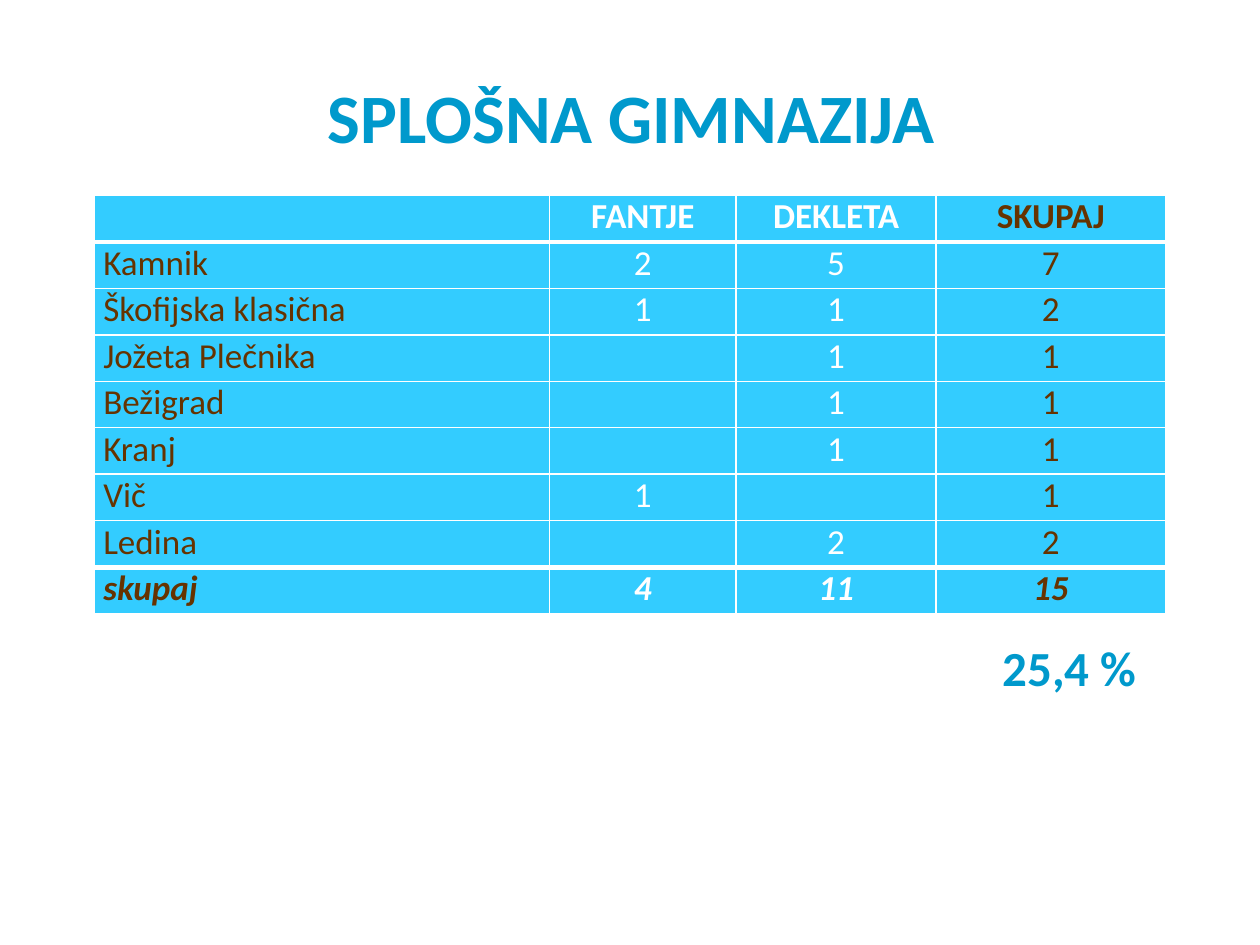
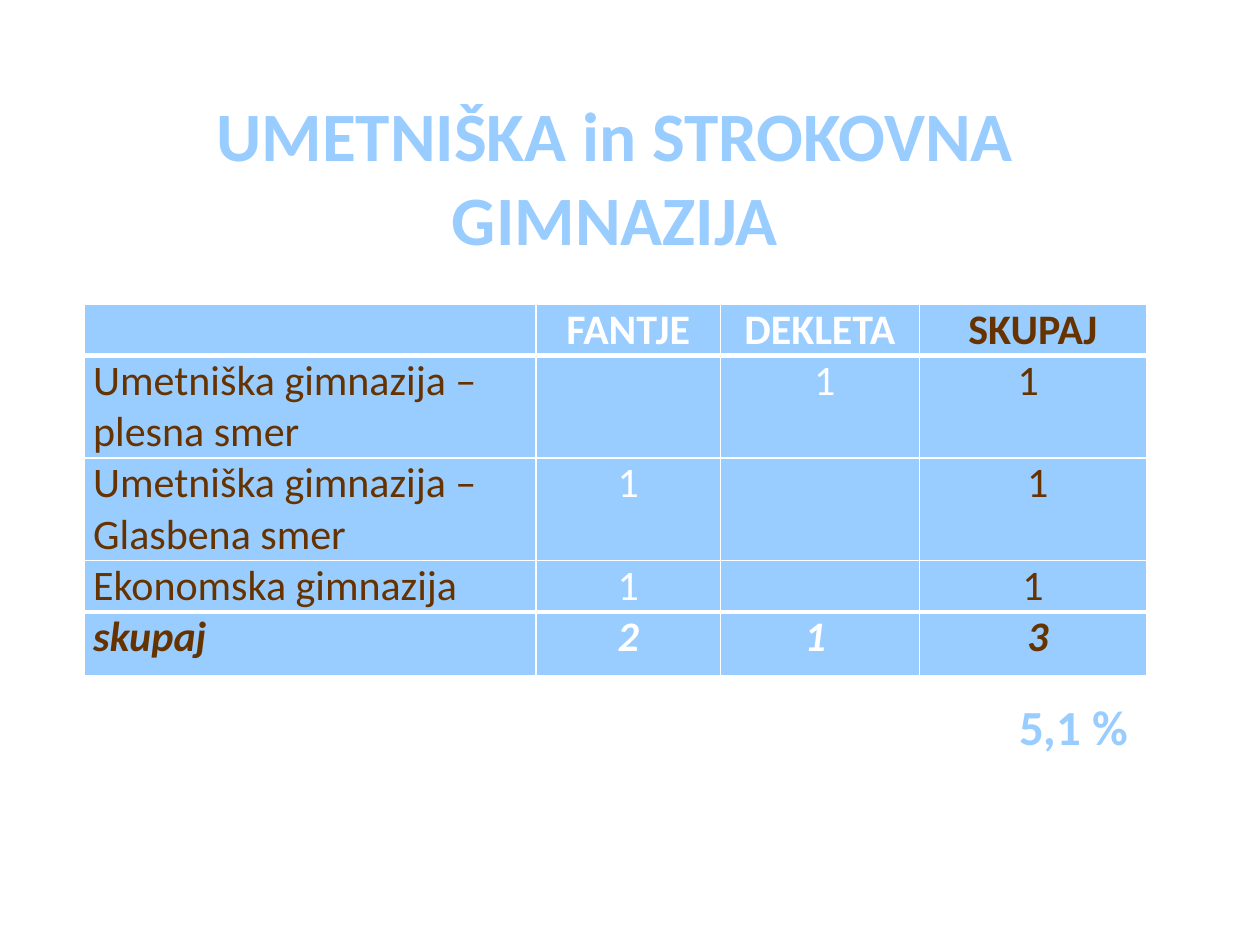
import lxml.etree
import pptx
import pptx.dml.color
import pptx.enum.text
import pptx.oxml.ns
import pptx.util

ALIGN = pptx.enum.text.PP_ALIGN
ANCHOR = pptx.enum.text.MSO_ANCHOR
FIT = pptx.enum.text.MSO_AUTO_SIZE
WHITE, BROWN = "FFFFFF", "663300"
HEADINGS = ["", "FANTJE", "DEKLETA", "SKUPAJ"]
COLUMN_SHARES = [42.5, 17.4, 18.7, 21.4]
COLUMN_COLOURS = [BROWN, WHITE, WHITE, BROWN]

deck = pptx.Presentation()
deck.slide_width = pptx.util.Inches(10)
deck.slide_height = pptx.util.Inches(7.5)


def frame(left, top, width, height):
    across, down = deck.slide_width / 100, deck.slide_height / 100
    return [round(left * across), round(top * down), round(width * across), round(height * down)]


def write(text_frame, text, size, colour, align, bold=True, italic=False):
    text_frame.text = text
    look = {"name": "Calibri", "size": pptx.util.Pt(size), "bold": bold, "italic": italic}
    for paragraph in text_frame.paragraphs:
        paragraph.alignment = align
        for run in paragraph.runs:
            for key, value in look.items():
                setattr(run.font, key, value)
            run.font.color.rgb = pptx.dml.color.RGBColor.from_string(colour)


schools = [
    {
        "title": "SPLOŠNA GIMNAZIJA",
        "title_frame": (5.1, 8, 90, 8.53),
        "accent": "0099CC",
        "fill": "33CCFF",
        "table_frame": (7.5, 20.67, 85, 44.27),
        "size": 20,
        "row_shares": [1] * 9,
        "rows": [
            ["Kamnik", "2", "5", "7"],
            ["Škofijska klasična", "1", "1", "2"],
            ["Jožeta Plečnika", "", "1", "1"],
            ["Bežigrad", "", "1", "1"],
            ["Kranj", "", "1", "1"],
            ["Vič", "1", "", "1"],
            ["Ledina", "", "2", "2"],
            ["skupaj", "4", "11", "15"],
        ],
        "percent": "25,4 %",
        "percent_frame": (78.6, 66.8, 14.1, 7.6),
    },
    {
        "title": "UMETNIŠKA in STROKOVNA GIMNAZIJA",
        "title_frame": (3.8, 10.27, 90, 16.67),
        "accent": "99CCFF",
        "fill": "99CCFF",
        "table_frame": (6.7, 32.2, 84.3, 39.2),
        "size": 24,
        "row_shares": [4, 8, 8, 4, 5],
        "rows": [
            ["Umetniška gimnazija – plesna smer", "", " 1", "1 "],
            ["Umetniška gimnazija –\nGlasbena smer", "1", "", " 1"],
            ["Ekonomska gimnazija", "1", "", "1"],
            ["skupaj", "2", "1 ", " 3"],
        ],
        "percent": "5,1 %",
        "percent_frame": (79.9, 73.07, 12.7, 7.6),
    },
]

for school in schools:
    slide = deck.slides.add_slide(deck.slide_layouts[5])

    title = slide.shapes.title
    title.left, title.top, title.width, title.height = frame(*school["title_frame"])
    write(title.text_frame, school["title"], 39.6, school["accent"], ALIGN.CENTER)
    for key, value in {"word_wrap": True, "auto_size": FIT.NONE, "vertical_anchor": ANCHOR.MIDDLE}.items():
        setattr(title.text_frame, key, value)

    rows = [HEADINGS] + school["rows"]
    last = len(rows) - 1
    left, top, width, height = frame(*school["table_frame"])
    enrolment = slide.shapes.add_table(len(rows), len(HEADINGS), left, top, width, height).table
    enrolment.horz_banding = False
    for column, share in zip(enrolment.columns, COLUMN_SHARES):
        column.width = round(width * share / sum(COLUMN_SHARES))
    for row, share in zip(enrolment.rows, school["row_shares"]):
        row.height = round(height * share / sum(school["row_shares"]))

    for r, texts in enumerate(rows):
        for c, text in enumerate(texts):
            cell = enrolment.cell(r, c)
            margins = {"margin_left": 0.07, "margin_right": 0.07, "margin_top": 0, "margin_bottom": 0}
            for side, inches in margins.items():
                setattr(cell, side, pptx.util.Inches(inches))
            align = ALIGN.LEFT if c == 0 else ALIGN.CENTER
            write(cell.text_frame, text, school["size"], COLUMN_COLOURS[c], align,
                  bold=r in (0, last), italic=r == last)
            cell.fill.solid()
            cell.fill.fore_color.rgb = pptx.dml.color.RGBColor.from_string(school["fill"])

            borders = {
                "lnL": 1,
                "lnR": 1,
                "lnT": 3 if r in (1, last) else 1,
                "lnB": 3 if r in (0, last - 1) else 1,
            }
            properties = cell._tc.get_or_add_tcPr()
            for place, (edge, points) in enumerate(borders.items()):
                line = lxml.etree.Element(pptx.oxml.ns.qn("a:" + edge), w=str(pptx.util.Pt(points)))
                paint = lxml.etree.SubElement(line, pptx.oxml.ns.qn("a:solidFill"))
                lxml.etree.SubElement(paint, pptx.oxml.ns.qn("a:srgbClr"), val=WHITE)
                properties.insert(place, line)

    percent = slide.shapes.add_textbox(*frame(*school["percent_frame"])).text_frame
    percent.word_wrap = True
    write(percent, school["percent"], 28, school["accent"], ALIGN.LEFT)

deck.save("out.pptx")
